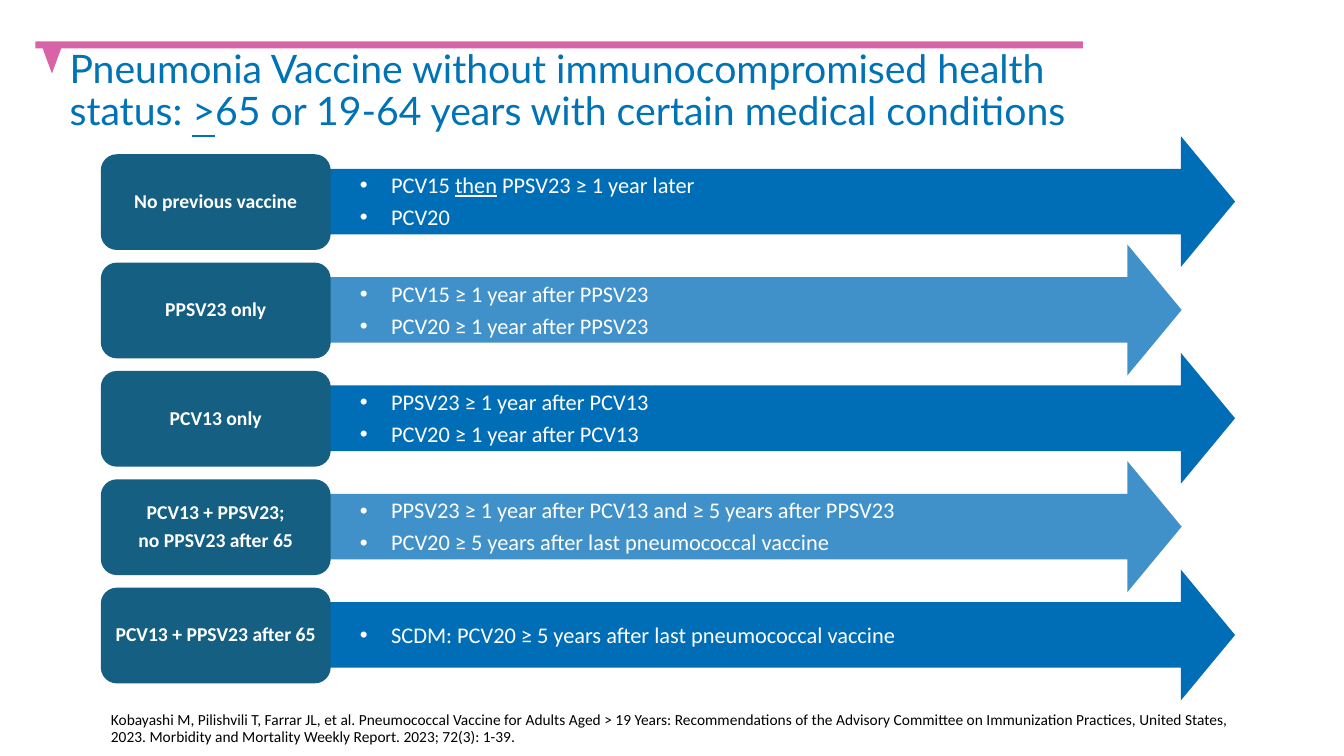
"""Builds a slide of pneumonia vaccine choices by vaccine history."""
import lxml.etree
import pptx
import pptx.dml.color
import pptx.enum.shapes
import pptx.enum.text
import pptx.oxml.ns
import pptx.util

Inches = pptx.util.Inches
Shape = pptx.enum.shapes.MSO_SHAPE
Align = pptx.enum.text.PP_ALIGN
Anchor = pptx.enum.text.MSO_ANCHOR
PINK, BLUE, TEAL, WHITE = "D664A7", "006DB7", "156082", "FFFFFF"
TITLE = ("Pneumonia Vaccine without\u00a0immunocompromised health status: "
         "_>_65 or 19-64 years with certain medical conditions")
ROWS = [
    (["No previous vaccine"], ["PCV15 _then_ PPSV23 ≥ 1 year later", "PCV20"]),
    (["PPSV23 only"],
     ["PCV15 ≥ 1 year after PPSV23", "PCV20 ≥ 1 year after PPSV23"]),
    (["PCV13 only"],
     ["PPSV23 ≥ 1 year after PCV13", "PCV20 ≥ 1 year after PCV13"]),
    (["PCV13 + PPSV23;", "no PPSV23 after 65"],
     ["PPSV23 ≥ 1 year after PCV13 and ≥ 5 years after PPSV23",
      "PCV20 ≥ 5 years after last pneumococcal vaccine"]),
    (["PCV13 + PPSV23 after 65"],
     ["SCDM: PCV20 ≥ 5 years after last pneumococcal vaccine"]),
]
SOURCE = ("Kobayashi M, Pilishvili T, Farrar JL, et al. Pneumococcal Vaccine for Adults "
          "Aged > 19 Years: Recommendations of the Advisory Committee on Immunization "
          "Practices, United States, 2023. Morbidity and Mortality Weekly Report. "
          "2023; 72(3): 1-39.")


def rgb(code):
    return pptx.dml.color.RGBColor.from_string(code)


def add_child(parent, tag, **attrs):
    name = pptx.oxml.ns.qn(tag)
    return lxml.etree.SubElement(parent, name, attrs)


def add_form(slide, kind, box, color, alpha=100):
    form = slide.shapes.add_shape(kind, *map(Inches, box))
    form.shadow.inherit = False
    form.fill.solid()
    form.fill.fore_color.rgb = rgb(color)
    form.line.fill.background()
    if alpha < 100:
        tint = form.fill._xPr.find(".//" + pptx.oxml.ns.qn("a:srgbClr"))
        add_child(tint, "a:alpha", val=str(alpha * 1000))
    return form


def add_bullet(para):
    props = para._p.get_or_add_pPr()
    props.set("marL", str(Inches(0.31)))
    props.set("indent", str(-Inches(0.31)))
    add_child(props, "a:buFont", typeface="Arial")
    add_child(props, "a:buChar", char="•")


def fill_text(frame, lines, size, color, face="Calibri", bold=False,
              align=Align.LEFT, bullet=False, after=0.35):
    """Writes one paragraph per line; words between underscores are underlined."""
    frame.word_wrap = True
    for i, line in enumerate(lines):
        para = frame.add_paragraph() if i else frame.paragraphs[0]
        para.alignment = align
        para.line_spacing = 0.9
        para.space_before = pptx.util.Pt(0)
        para.space_after = pptx.util.Pt(size * after)
        if bullet:
            add_bullet(para)
        font = para.font
        font.name, font.bold = face, bold
        font.size = pptx.util.Pt(size)
        font.color.rgb = rgb(color)
        for j, part in enumerate(line.split("_")):
            run = para.add_run()
            run.text = part
            if j % 2:
                run.font.underline = True


def set_frame(frame, side=0.06):
    frame.vertical_anchor = Anchor.MIDDLE
    frame.margin_left = frame.margin_right = Inches(side)
    frame.margin_top = frame.margin_bottom = Inches(0.06)


def add_text(slide, box, lines, size, color, **style):
    frame = slide.shapes.add_textbox(*map(Inches, box)).text_frame
    set_frame(frame)
    fill_text(frame, lines, size, color, **style)


def add_title(slide):
    title = slide.shapes.title
    title.left, title.top = Inches(0.59), Inches(0.44)
    title.width, title.height = Inches(11), Inches(1.03)
    frame = title.text_frame
    frame.auto_size = pptx.enum.text.MSO_AUTO_SIZE.NONE
    frame.vertical_anchor = Anchor.TOP
    fill_text(frame, [TITLE], 28, "0073B6", face="Lato", after=0)


def add_row(slide, i, label, items):
    top = 1.53 + 1.075 * i
    width, alpha = (8.51, 75) if i % 2 else (9.04, 100)
    arrow = add_form(slide, Shape.RIGHT_ARROW, (3.21, top - 0.18, width, 1.3),
                     BLUE, alpha)
    arrow.adjustments[1] = 0.414
    card = add_form(slide, Shape.ROUNDED_RECTANGLE, (1, top, 2.28, 0.95), TEAL)
    set_frame(card.text_frame, 0.08)
    fill_text(card.text_frame, label, 14, WHITE, bold=True, align=Align.CENTER)
    add_text(slide, (3.51, top + 0.17, 5.85, 0.62), items, 16, WHITE, bullet=True)


def main():
    deck = pptx.Presentation()
    deck.slide_width, deck.slide_height = Inches(13.33), Inches(7.5)
    slide = deck.slides.add_slide(deck.slide_layouts[5])
    add_form(slide, Shape.RECTANGLE, (0.35, 0.41, 10.39, 0.07), PINK)
    mark = add_form(slide, Shape.ISOSCELES_TRIANGLE, (0.42, 0.47, 0.19, 0.26), PINK)
    mark.rotation = 180
    add_title(slide)
    for i, (label, items) in enumerate(ROWS):
        add_row(slide, i, label, items)
    add_text(slide, (1.04, 6.92, 11.25, 0.62), [SOURCE], 11, "000000")
    deck.save("out.pptx")


if __name__ == "__main__":
    main()
